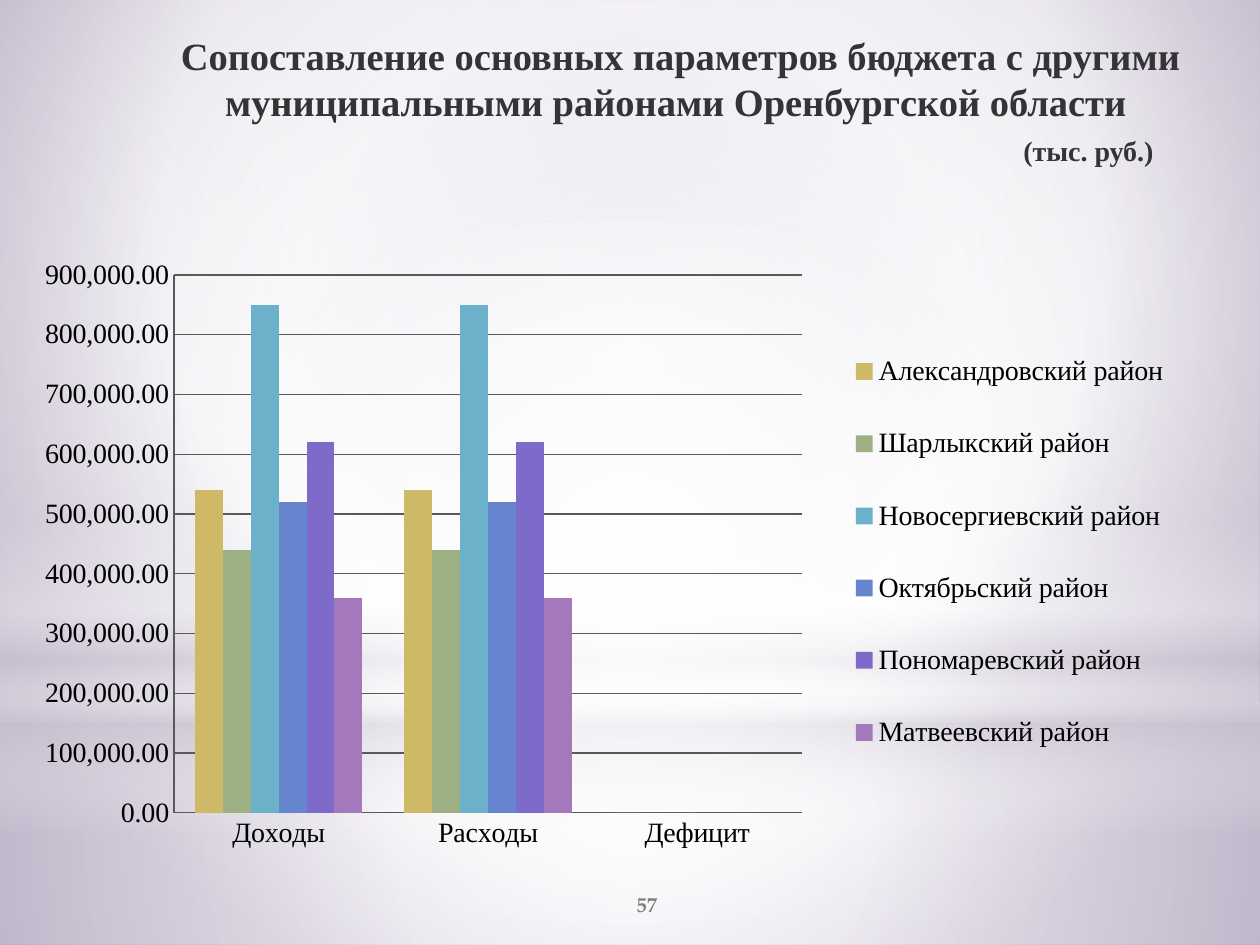
from lxml import etree
from pptx import Presentation
from pptx.chart.data import CategoryChartData
from pptx.dml.color import RGBColor
from pptx.enum.chart import XL_CHART_TYPE, XL_LEGEND_POSITION, XL_TICK_MARK
from pptx.enum.shapes import MSO_SHAPE
from pptx.enum.text import MSO_ANCHOR, PP_ALIGN
from pptx.oxml import parse_xml
from pptx.oxml.ns import qn
from pptx.util import Emu, Pt

RECTANGLE, OVAL = MSO_SHAPE.RECTANGLE, MSO_SHAPE.OVAL
CENTER, RIGHT = PP_ALIGN.CENTER, PP_ALIGN.RIGHT
TOP, MIDDLE = MSO_ANCHOR.TOP, MSO_ANCHOR.MIDDLE
COLUMNS = XL_CHART_TYPE.COLUMN_CLUSTERED
LEGEND_RIGHT = XL_LEGEND_POSITION.RIGHT
NO_TICK = XL_TICK_MARK.NONE

SERIF, NUMBER_FONT = "Times New Roman", "TeX Gyre Pagella"
WHITE, LILAC = "FFFFFF", "C9C2D1"
DRAWING_NS = "http://schemas.openxmlformats.org/drawingml/2006/main"
CHART_NS = "http://schemas.openxmlformats.org/drawingml/2006/chart"
CENTRE_FOCUS = (50, 50, 50, 50)

CATEGORIES = ("Доходы", "Расходы", "Дефицит")
DISTRICTS = (
    ("Александровский район", (540000, 540000, 0), "CEB966"),
    ("Шарлыкский район", (440000, 440000, 0), "9CB084"),
    ("Новосергиевский район", (850000, 850000, 0), "6BB1C9"),
    ("Октябрьский район", (520000, 520000, None), "6585CF"),
    ("Пономаревский район", (620000, 620000, None), "7E6BC9"),
    ("Матвеевский район", (360000, 360000, None), "A379BB"),
)


def px(length):
    return Emu(round(length * 914400 / 126))


def color(value):
    return RGBColor.from_string(value)


def set_gradient(element, stops, focus=None):
    gradient = etree.Element(qn("a:gradFill"), nsmap={"a": DRAWING_NS}, rotWithShape="1")
    stop_list = etree.SubElement(gradient, qn("a:gsLst"))
    for position, value, opacity in stops:
        stop = etree.SubElement(stop_list, qn("a:gs"), pos=str(position * 1000))
        tint = etree.SubElement(stop, qn("a:srgbClr"), val=value)
        if opacity < 100:
            etree.SubElement(tint, qn("a:alpha"), val=str(opacity * 1000))
    if focus:
        path = etree.SubElement(gradient, qn("a:path"), attrib={"path": "circle"})
        edges = {side: str(inset * 1000) for side, inset in zip("ltrb", focus)}
        etree.SubElement(path, qn("a:fillToRect"), attrib=edges)
    else:
        etree.SubElement(gradient, qn("a:lin"), ang="5400000", scaled="0")
    solid = element.find(".//" + qn("a:solidFill"))
    solid.getparent().replace(solid, parse_xml(etree.tostring(gradient)))


def add_glow(slide, kind, box, stops, focus=None):
    shape = slide.shapes.add_shape(kind, *map(px, box))
    shape.shadow.inherit = False
    shape.fill.solid()
    set_gradient(shape.element, stops, focus)
    shape.line.fill.background()


def add_backdrop(slide, box):
    left, top, width, height = box
    slide.background.fill.solid()
    set_gradient(
        slide.element,
        ((0, "C1B7CD", 100), (60, WHITE, 100), (100, "A191B5", 100)),
        (20, 10, 20, 60),
    )
    horizon = 703
    add_glow(slide, RECTANGLE, (left, top + horizon, width, height - horizon),
             ((0, WHITE, 91), (37, WHITE, 76), (100, LILAC, 79)), CENTRE_FOCUS)
    add_glow(slide, RECTANGLE, (left, top, width, horizon),
             ((0, WHITE, 89), (48, WHITE, 62), (100, LILAC, 79)), CENTRE_FOCUS)
    add_glow(slide, RECTANGLE, (left, top + 519, width, 315),
             ((0, WHITE, 0), (29, WHITE, 30), (45, LILAC, 40),
              (55, WHITE, 26), (65, LILAC, 60), (100, WHITE, 0)))
    add_glow(slide, OVAL, (left, top + 220, width, horizon),
             ((0, WHITE, 100), (56, WHITE, 0)), CENTRE_FOCUS)


def add_text_frame(slide, box, anchor):
    frame = slide.shapes.add_textbox(*map(px, box)).text_frame
    frame.word_wrap = True
    frame.vertical_anchor = anchor
    return frame


def add_run(paragraph, text, size, font_name, value):
    run = paragraph.add_run()
    run.text = text
    run.font.size = Pt(size)
    run.font.name = font_name
    run.font.bold = True
    run.font.color.rgb = color(value)


def add_title(slide, box):
    frame = add_text_frame(slide, box, TOP)
    heading = frame.paragraphs[0]
    heading.alignment = CENTER
    add_run(heading, "Сопоставление основных параметров бюджета с другими "
            "муниципальными районами Оренбургской области ", 22, SERIF, "343436")
    unit = frame.add_paragraph()
    unit.alignment = RIGHT
    unit.space_before = Pt(5)
    unit._p.get_or_add_pPr().set("marR", str(px(31)))
    add_run(unit, "(тыс. руб.)", 16, SERIF, "343436")


def add_page_number(slide, box):
    paragraph = add_text_frame(slide, box, MIDDLE).paragraphs[0]
    paragraph.alignment = CENTER
    add_run(paragraph, "57", 12, NUMBER_FONT, "808080")


def set_layout(element, box, chart_size, inner=False):
    for old in element.findall(qn("c:layout")):
        element.remove(old)
    layout = etree.Element(qn("c:layout"), nsmap={"c": CHART_NS})
    manual = etree.SubElement(layout, qn("c:manualLayout"))
    settings = [("layoutTarget", "inner")] if inner else []
    settings += [("xMode", "edge"), ("yMode", "edge")]
    settings += [(name, length / whole)
                 for name, length, whole in zip("xywh", box, chart_size * 2)]
    for name, value in settings:
        etree.SubElement(manual, qn("c:" + name), val=str(value))
    element.insert(0 if inner else 1, parse_xml(etree.tostring(layout)))


def set_font(font):
    font.size = Pt(16)
    font.name = SERIF
    font.color.rgb = color("000000")


def set_line(line):
    line.color.rgb = color("595959")
    line.width = Pt(0.75)


def add_budget_chart(slide, box):
    chart_size = box[2:]
    data = CategoryChartData(number_format="#,##0.00")
    data.categories = CATEGORIES
    for name, values, _ in DISTRICTS:
        data.add_series(name, values)
    chart = slide.shapes.add_chart(COLUMNS, *map(px, box), data).chart
    set_font(chart.font)
    chart.has_title = False
    chart.has_legend = True
    chart.legend.position = LEGEND_RIGHT
    chart.legend.include_in_layout = False
    set_font(chart.legend.font)
    set_layout(chart.legend._element, (809, 59, 343, 474), chart_size)

    plot = chart.plots[0]
    plot.gap_width = 150
    plot.overlap = 0
    plot.vary_by_categories = False
    for series, (_, _, value) in zip(plot.series, DISTRICTS):
        series.format.fill.solid()
        series.format.fill.fore_color.rgb = color(value)
        series.invert_if_negative = False

    for axis in (chart.category_axis, chart.value_axis):
        axis.major_tick_mark = NO_TICK
        axis.minor_tick_mark = NO_TICK
        set_font(axis.tick_labels.font)
        set_line(axis.format.line)
    values_axis = chart.value_axis
    values_axis.minimum_scale = 0
    values_axis.maximum_scale = 900000
    values_axis.major_unit = 100000
    values_axis.tick_labels.number_format = "#,##0.00"
    values_axis.tick_labels.number_format_is_linked = False
    set_line(values_axis.major_gridlines.format.line)
    plot_area = chart.element.find(".//" + qn("c:plotArea"))
    set_layout(plot_area, (145, 19, 628, 538), chart_size, inner=True)


def main():
    presentation = Presentation()
    presentation.slide_width, presentation.slide_height = px(1260), px(945)
    slide = presentation.slides.add_slide(presentation.slide_layouts[6])
    add_backdrop(slide, (0, 0, 1260, 945))
    add_page_number(slide, (521, 879, 252, 50))
    add_title(slide, (164, 26, 1033, 147))
    add_budget_chart(slide, (29, 256, 1182, 650))
    presentation.save("out.pptx")


if __name__ == "__main__":
    main()
